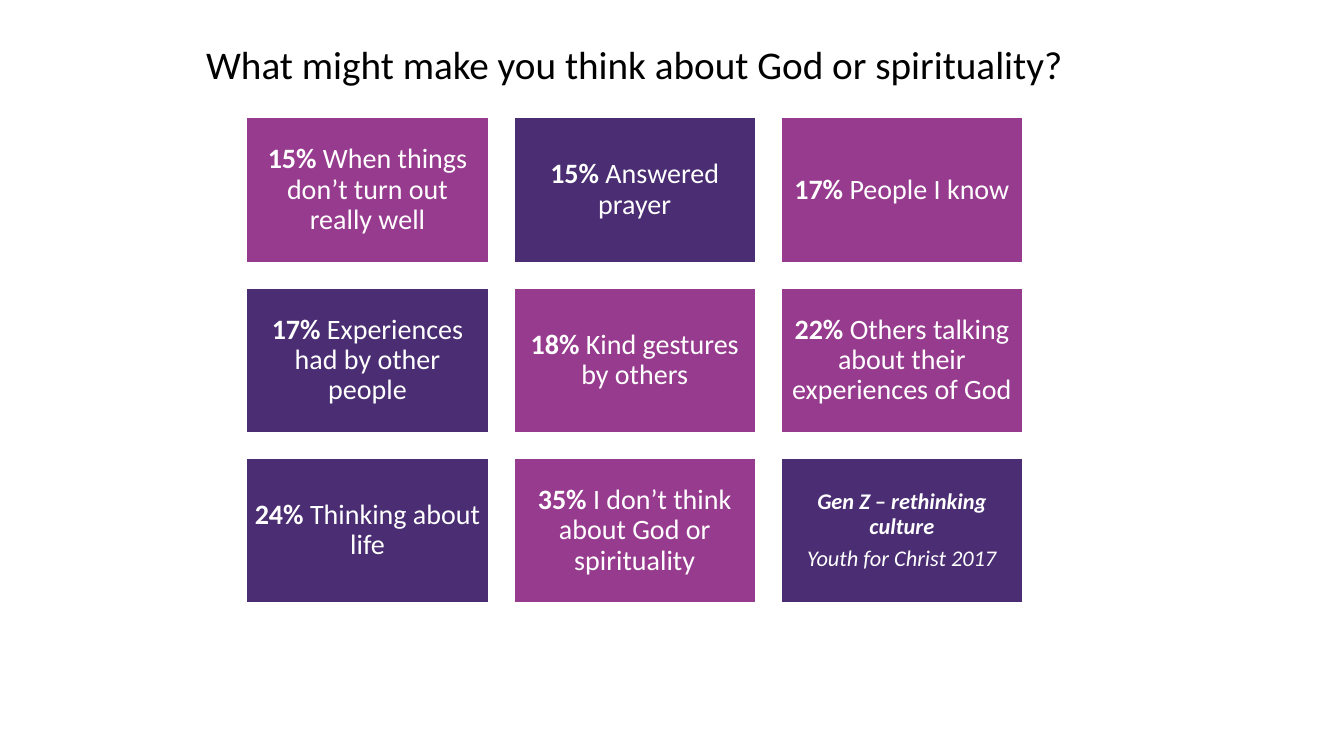
from dataclasses import dataclass

from pptx import Presentation
from pptx.dml.color import RGBColor
from pptx.enum.shapes import MSO_SHAPE
from pptx.enum.text import MSO_ANCHOR, MSO_AUTO_SIZE, PP_ALIGN
from pptx.util import Inches, Pt

RECTANGLE = MSO_SHAPE.RECTANGLE
CENTER = PP_ALIGN.CENTER
TOP = MSO_ANCHOR.TOP
MIDDLE = MSO_ANCHOR.MIDDLE
NO_AUTOFIT = MSO_AUTO_SIZE.NONE
TITLE_ONLY = 5


@dataclass(frozen=True)
class Theme:
    font: str = "Calibri"
    black: RGBColor = RGBColor(0x00, 0x00, 0x00)
    white: RGBColor = RGBColor(0xFF, 0xFF, 0xFF)
    magenta: RGBColor = RGBColor(0x97, 0x3B, 0x8E)
    violet: RGBColor = RGBColor(0x4A, 0x2D, 0x72)
    title_size: int = 28
    answer_size: int = 20
    source_size: int = 16
    border: int = 2
    line_spacing: float = 0.9
    space_after: float = 0.35


THEME = Theme()
TITLE = "What might make you think about God or spirituality?"
TITLE_BOX = (1.59, 0.35, 9.4, 1.08)
GRID_BOX = (2.44, 1.16, 7.71, 4.83)
COLUMNS, ROWS, GAP = 3, 3, 0.24

ANSWERS = [
    ("15%", "When things don’t turn out really well", THEME.magenta),
    ("15%", "Answered prayer", THEME.violet),
    ("17%", "People I know", THEME.magenta),
    ("17%", "Experiences had by other people", THEME.violet),
    ("18%", "Kind gestures by others", THEME.magenta),
    ("22%", "Others talking about their experiences of God", THEME.magenta),
    ("24%", "Thinking about life", THEME.violet),
    ("35%", "I don’t think about God or spirituality", THEME.magenta),
]
SOURCE = ("Gen Z – rethinking culture", "Youth for Christ 2017")


def style_run(run, size, color, bold=False, italic=False):
    run.font.name = THEME.font
    run.font.size = Pt(size)
    run.font.color.rgb = color
    run.font.bold = bold
    run.font.italic = italic


def add_title(slide, box):
    title = slide.shapes.title
    title.left, title.top, title.width, title.height = map(Inches, box)
    frame = title.text_frame
    frame.text = TITLE
    frame.word_wrap = True
    frame.auto_size = NO_AUTOFIT
    frame.vertical_anchor = TOP
    paragraph = frame.paragraphs[0]
    paragraph.alignment = CENTER
    style_run(paragraph.runs[0], THEME.title_size, THEME.black)


def add_tile(slide, box, color, inset):
    tile = slide.shapes.add_shape(RECTANGLE, *map(Inches, box))
    tile.shadow.inherit = False
    tile.fill.solid()
    tile.fill.fore_color.rgb = color
    tile.line.color.rgb = THEME.white
    tile.line.width = Pt(THEME.border)
    frame = tile.text_frame
    frame.word_wrap = True
    frame.vertical_anchor = MIDDLE
    frame.margin_left = frame.margin_right = Inches(inset)
    frame.margin_top = frame.margin_bottom = Inches(inset)
    return frame


def format_paragraph(paragraph, size):
    paragraph.alignment = CENTER
    paragraph.line_spacing = THEME.line_spacing
    paragraph.space_after = Pt(size * THEME.space_after)


def add_answer(slide, box, share, reason, color):
    frame = add_tile(slide, box, color, 0.08)
    paragraph = frame.paragraphs[0]
    format_paragraph(paragraph, THEME.answer_size)
    for text, bold in ((share, True), (f" {reason}", False)):
        run = paragraph.add_run()
        run.text = text
        style_run(run, THEME.answer_size, THEME.white, bold)


def add_source(slide, box):
    frame = add_tile(slide, box, THEME.violet, 0.07)
    frame.text = "\n".join(SOURCE)
    for index, paragraph in enumerate(frame.paragraphs):
        format_paragraph(paragraph, THEME.source_size)
        style_run(paragraph.runs[0], THEME.source_size, THEME.white, index == 0, True)


def grid_cells(box):
    left, top, width, height = box
    cell_width = (width - GAP * (COLUMNS - 1)) / COLUMNS
    cell_height = (height - GAP * (ROWS - 1)) / ROWS
    return [
        (left + column * (cell_width + GAP), top + row * (cell_height + GAP), cell_width, cell_height)
        for row in range(ROWS)
        for column in range(COLUMNS)
    ]


def add_answer_grid(slide, box):
    cells = grid_cells(box)
    for cell, answer in zip(cells, ANSWERS):
        add_answer(slide, cell, *answer)
    add_source(slide, cells[-1])


def main():
    presentation = Presentation()
    presentation.slide_width = Inches(13.33)
    presentation.slide_height = Inches(7.5)
    slide = presentation.slides.add_slide(presentation.slide_layouts[TITLE_ONLY])
    add_title(slide, TITLE_BOX)
    add_answer_grid(slide, GRID_BOX)
    presentation.save("out.pptx")


if __name__ == "__main__":
    main()
